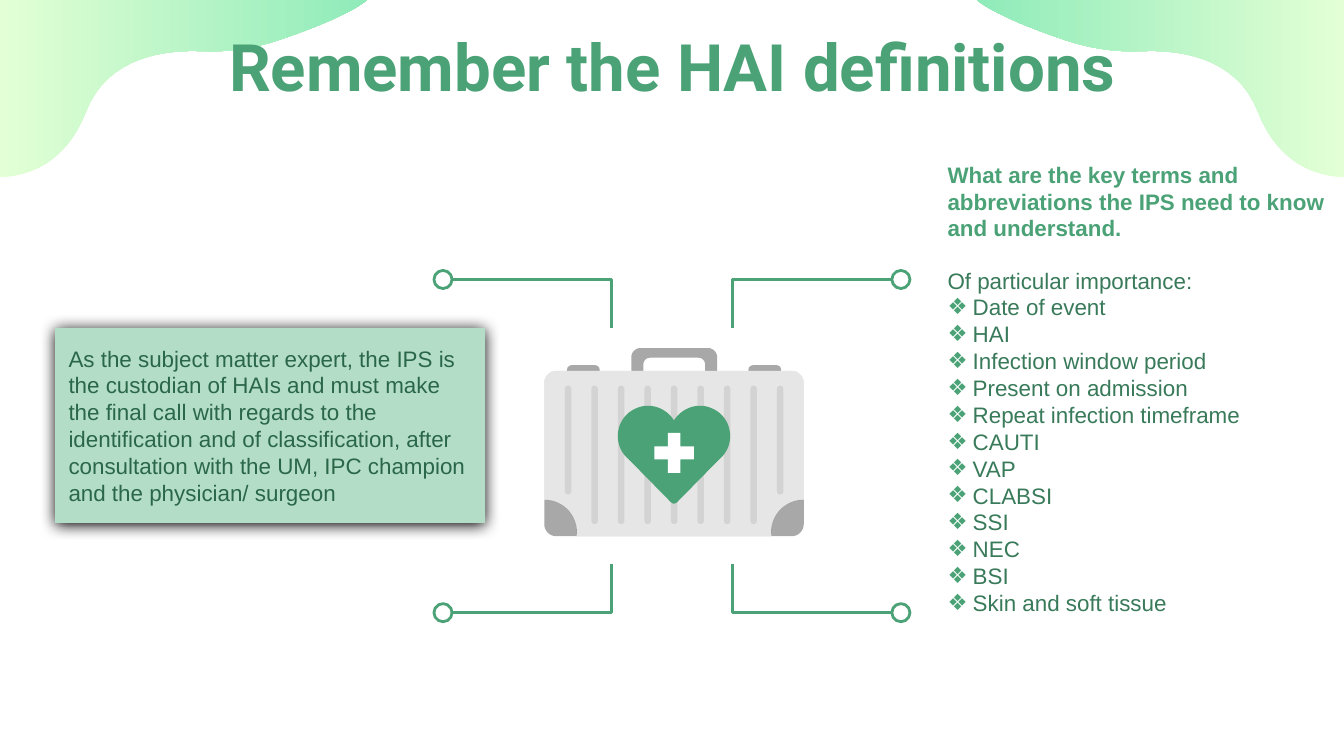
from lxml import etree
from pptx import Presentation
from pptx import util as u
from pptx.dml.color import RGBColor
from pptx.enum import shapes, text
from pptx.oxml import ns

COLORS = {
    "green": "4AA276", "list": "387A59", "dark": "2A6748", "mint": "B4DDC8",
    "pale": "E3FFD5", "aqua": "90EBBA", "case": "D1D1D1",
    "black": "000000", "white": "FFFFFF",
}
SLIDE_WIDTH = 720
CASE_CENTER = 361.1
LIST_ITEMS = [
    "Date of event", "HAI", "Infection window period", "Present on admission",
    "Repeat infection timeframe", "CAUTI", "VAP", "CLABSI", "SSI", "NEC", "BSI",
    "Skin and soft tissue",
]


def trace(segments, steps=16):
    points = [segments[0]]
    for segment in segments[1:]:
        if len(segment) == 2:
            points.append(segment)
            continue
        controls = [points[-1], segment[:2], segment[2:4], segment[4:]]
        for step in range(1, steps + 1):
            t = step / steps
            weights = ((1 - t) ** 3, 3 * t * (1 - t) ** 2, 3 * t * t * (1 - t), t ** 3)
            points.append(tuple(sum(w * c[axis] for w, c in zip(weights, controls))
                                for axis in (0, 1)))
    return points


def mirror(points, center):
    return [(2 * center - x, y) for x, y in points]


def symmetric(half, center):
    return half + mirror(half, center)[::-1]


def rounded(left, top, right, bottom, radius):
    r = radius * 0.45
    half = trace([
        ((left + right) / 2, top), (left + radius, top),
        (left + r, top, left, top + r, left, top + radius),
        (left, bottom - radius),
        (left, bottom - r, left + r, bottom, left + radius, bottom),
    ])
    return symmetric(half, (left + right) / 2)


class SlideBuilder:
    font = "Arial"
    title_font = "Roboto"
    line_width = 1.5

    def __init__(self, presentation):
        self.slide = presentation.slides.add_slide(presentation.slide_layouts[3])

    def color(self, name):
        return RGBColor.from_string(COLORS[name])

    def paint(self, shape, fill=None, line=None, alpha=None):
        shape.shadow.inherit = False
        if fill:
            shape.fill.solid()
            shape.fill.fore_color.rgb = self.color(fill)
        else:
            shape.fill.background()
        if alpha:
            value = shape.element.spPr.find(".//" + ns.qn("a:srgbClr"))
            etree.SubElement(value, ns.qn("a:alpha"), val=str(alpha * 1000))
        if line:
            shape.line.color.rgb = self.color(line)
            shape.line.width = u.Pt(self.line_width)
        else:
            shape.line.fill.background()
        return shape

    def preset(self, kind, left, top, width, height, adjustment=None, **style):
        shape = self.slide.shapes.add_shape(
            kind, u.Pt(left), u.Pt(top), u.Pt(width), u.Pt(height))
        if adjustment is not None:
            shape.adjustments[0] = adjustment
        return self.paint(shape, **style)

    def outline(self, *contours, close=True, **style):
        builder = None
        for contour in contours:
            points = [(u.Pt(x), u.Pt(y)) for x, y in contour]
            if builder is None:
                builder = self.slide.shapes.build_freeform(*points[0], scale=1.0)
            else:
                builder.move_to(*points[0])
            builder.add_line_segments(points[1:], close=close)
        return self.paint(builder.convert_to_shape(), **style)

    def wave(self, points, angle):
        shape = self.outline(points)
        shape.fill.gradient()
        shape.fill.gradient_angle = angle
        for stop, name in zip(shape.fill.gradient_stops, ("pale", "aqua")):
            stop.color.rgb = self.color(name)

    def placeholder(self, index, left, top, width, height, inset=7.2):
        shape = self.slide.placeholders[index]
        shape.element.getparent().append(shape.element)
        shape.left, shape.top = u.Pt(left), u.Pt(top)
        shape.width, shape.height = u.Pt(width), u.Pt(height)
        frame = shape.text_frame
        frame.auto_size = text.MSO_AUTO_SIZE.NONE
        frame.word_wrap = True
        frame.vertical_anchor = text.MSO_ANCHOR.MIDDLE
        frame.margin_left = frame.margin_right = u.Pt(inset)
        frame.margin_top = frame.margin_bottom = u.Pt(inset)
        return shape

    def style_runs(self, paragraph, color, size=12, bold=False, font=None):
        for run in paragraph.runs:
            run.font.name = font or self.font
            run.font.size = u.Pt(size)
            run.font.bold = bold
            run.font.color.rgb = self.color(color)

    def body_paragraph(self, paragraph, color, bold=False, before=0, bullet=None):
        self.style_runs(paragraph, color, bold=bold)
        paragraph.alignment = text.PP_ALIGN.LEFT
        paragraph.line_spacing = u.Pt(14.4)
        paragraph.space_before = u.Pt(before)
        properties = paragraph._p.get_or_add_pPr()
        indent = u.Pt(13.5) if bullet else 0
        properties.set("marL", str(indent))
        properties.set("indent", str(-indent))
        if bullet:
            bullet_color = etree.SubElement(properties, ns.qn("a:buClr"))
            etree.SubElement(bullet_color, ns.qn("a:srgbClr"), val=COLORS["green"])
            etree.SubElement(properties, ns.qn("a:buChar"), char=bullet)
        else:
            etree.SubElement(properties, ns.qn("a:buNone"))

    def cast_shadow(self, shape):
        effects = shape.element.spPr.find(ns.qn("a:effectLst"))
        shadow = etree.SubElement(
            effects, ns.qn("a:outerShdw"), blurRad=str(u.Pt(8.5)),
            dist=str(u.Pt(1)), dir="5400000", algn="ctr", rotWithShape="0")
        etree.SubElement(shadow, ns.qn("a:srgbClr"), val=COLORS["black"])


def draw_waves(builder):
    wave = trace([
        (0, 95), (13, 94.3, 34.6, 89.3, 46.1, 59.8),
        (57.6, 30.2, 88.6, 26.6, 108, 27.4), (121.7, 28.1, 136.1, 25.9, 149, 21.6),
        (166.3, 15.8, 187.9, 7.2, 196.6, 0), (0, 0),
    ])
    builder.wave(wave, 0)
    builder.wave(mirror(wave, SLIDE_WIDTH / 2), 180)


def draw_callouts(builder):
    for level, end, circle_top in ((149.8, 175.7, 144.9), (328.3, 302.4, 323.4)):
        elbow = [(241.9, level), (327.6, level), (327.6, end)]
        for points in (elbow, mirror(elbow, SLIDE_WIDTH / 2)):
            builder.outline(points, close=False, line="green")
        for left in (232.5, 477.8):
            builder.preset(shapes.MSO_SHAPE.OVAL, left, circle_top, 9.7, 9.7, line="green")


def draw_case(builder):
    round_box = shapes.MSO_SHAPE.ROUNDED_RECTANGLE
    builder.outline(rounded(338.2, 186.5, 384.2, 211, 5),
                    rounded(344.7, 191.7, 377.7, 210.2, 3.5), fill="black", alpha=34)
    for left in (303.7, 400.9):
        builder.preset(round_box, left, 195.6, 17.6, 5.2, 0.5, fill="black", alpha=34)

    notch = (302.4, 267.8, 310.3, 277.2, 308.9, 287.3)
    body = symmetric(trace([
        (CASE_CENTER, 198.7), (298.1, 198.7), (294.5, 198.7, 291.6, 201.6, 291.6, 205.2),
        (291.6, 267.8), notch,
    ]), CASE_CENTER)
    builder.outline(body, fill="case")
    builder.outline(body, fill="white", alpha=46)
    corner = trace([(291.6, 267.8), notch, (298.1, 287.3),
                    (294.5, 287.3, 291.6, 284.4, 291.6, 280.8)])
    for points in (corner, mirror(corner, CASE_CENTER)):
        builder.outline(points, fill="black", alpha=34)

    for rib in range(9):
        height = 58.3 if rib in (0, 8) else 74.2
        builder.preset(round_box, 302.6 + 14.2 * rib, 206.6, 3.5, height, 0.5,
                       fill="black", alpha=8)
    heart = trace([
        (CASE_CENTER, 225.2), (357.8, 220.3, 352.8, 217.4, 347, 217.4),
        (343.4, 217.4, 339.8, 218.9, 337, 221), (329, 227.5, 329, 239.8, 337, 246.2),
        (359.5, 269.1), (360, 269.5, 360.6, 269.8, CASE_CENTER, 269.8),
    ])
    builder.outline(symmetric(heart, CASE_CENTER), fill="green")
    builder.preset(shapes.MSO_SHAPE.CROSS, 350.6, 231.9, 21.2, 21.4, 0.34, fill="white")


def write_texts(builder):
    title = builder.placeholder(0, 56.9, 14.4, 607, 41, inset=0)
    title.text_frame.text = "Remember the HAI definitions"
    heading = title.text_frame.paragraphs[0]
    heading.alignment = text.PP_ALIGN.CENTER
    builder.style_runs(heading, "green", 35, True, builder.title_font)

    role = builder.paint(builder.placeholder(1, 29.5, 175.7, 230.4, 104.4), fill="mint")
    builder.cast_shadow(role)
    role.text_frame.text = (
        "As the subject matter expert, the IPS is the custodian of HAIs and must make "
        "the final call with regards to the identification and of classification, after "
        "consultation with the UM, IPC champion and the physician/ surgeon")
    builder.body_paragraph(role.text_frame.paragraphs[0], "dark")

    terms = builder.placeholder(2, 500.4, 182.9, 219.6, 50.4).text_frame
    terms.text = "\n".join([
        "What are the key terms and abbreviations the IPS need to know and understand.",
        "Of particular importance:", *LIST_ITEMS])
    question, lead, *items = terms.paragraphs
    builder.body_paragraph(question, "green", bold=True)
    builder.body_paragraph(lead, "list", before=13.5)
    for item in items:
        builder.body_paragraph(item, "list", bullet="❖")


def main():
    presentation = Presentation()
    presentation.slide_width, presentation.slide_height = u.Pt(SLIDE_WIDTH), u.Pt(405)
    builder = SlideBuilder(presentation)
    draw_waves(builder)
    draw_callouts(builder)
    draw_case(builder)
    write_texts(builder)
    presentation.save("out.pptx")


if __name__ == "__main__":
    main()
